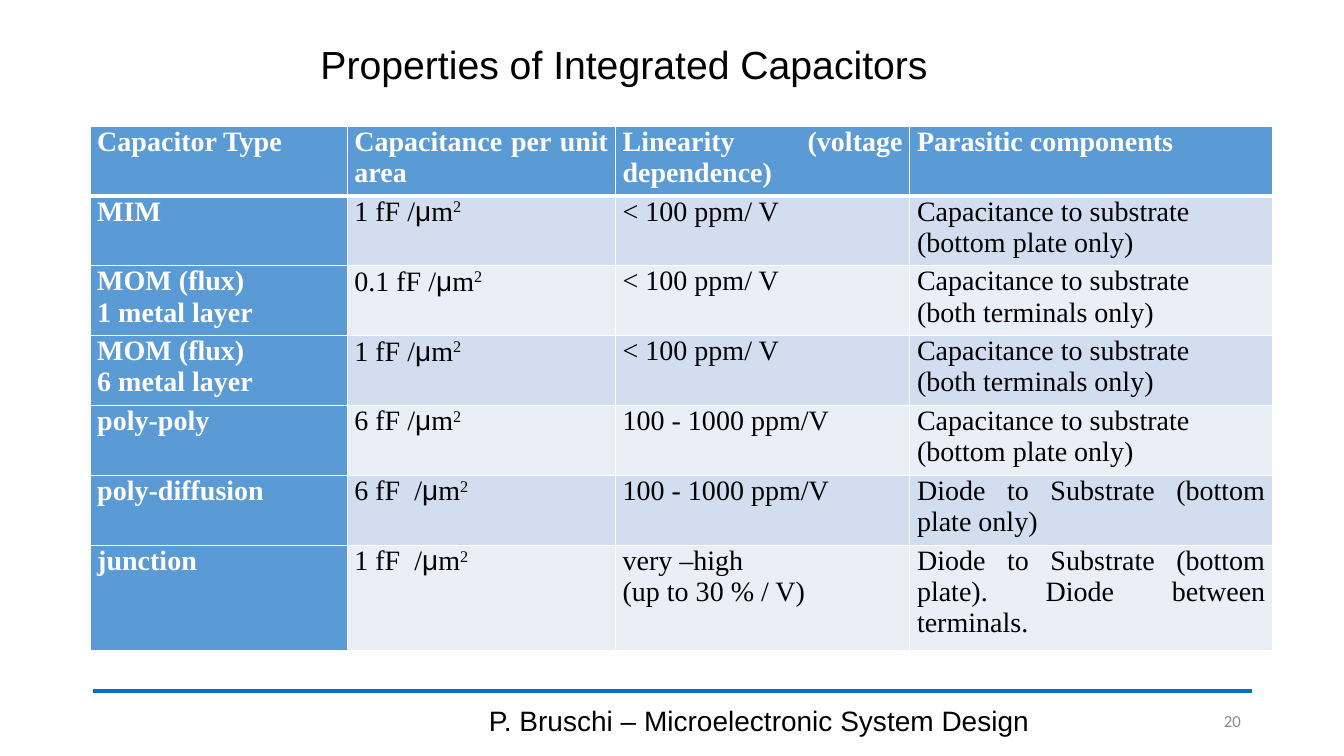
from lxml import etree
from pptx import Presentation
from pptx.dml.color import RGBColor
from pptx.enum.shapes import MSO_CONNECTOR
from pptx.enum.text import MSO_ANCHOR, PP_ALIGN
from pptx.oxml.ns import qn
from pptx.util import Cm, Pt

STRAIGHT = MSO_CONNECTOR.STRAIGHT
MIDDLE = MSO_ANCHOR.MIDDLE
CENTER, RIGHT, JUSTIFY = PP_ALIGN.CENTER, PP_ALIGN.RIGHT, PP_ALIGN.JUSTIFY

SERIF, SANS = "Times New Roman", "Arial"
BLACK, WHITE, GREY = "000000", "FFFFFF", "8C8C8C"
HEADER_BLUE, RULE_BLUE = "5B9BD5", "0070C0"
BANDS = ("D2DEEF", "EAEFF7")

COLUMN_WIDTHS = (6.48, 6.76, 7.42, 9.14)
ROW_HEIGHT, LAST_ROW_HEIGHT = 1.76, 2.65
UNIT_COLUMN = 1

HEADINGS = ("Capacitor Type", "Capacitance per unit area ",
            "Linearity (voltage dependence) ", "Parasitic components")
BOTTOM_PLATE = "Capacitance to substrate\n(bottom plate only)"
BOTH_TERMINALS = "Capacitance to substrate\n(both terminals only)"
CAPACITORS = (
    ("MIM", "1 fF /", "< 100 ppm/ V", BOTTOM_PLATE),
    ("MOM (flux)\n1 metal layer", "0.1 fF /", "< 100 ppm/ V", BOTH_TERMINALS),
    ("MOM (flux)\n6 metal layer", "1 fF /", "< 100 ppm/ V", BOTH_TERMINALS),
    ("poly-poly ", "6 fF /", "100 - 1000 ppm/V", BOTTOM_PLATE),
    ("poly-diffusion", "6 fF  /", "100 - 1000 ppm/V",
     "Diode to Substrate (bottom plate only)"),
    ("junction", "1 fF  /", "very –high \n(up to 30 % / V)",
     "Diode to Substrate (bottom plate). Diode between terminals."),
)


def rgb(color):
    """Turn a hex string into a colour."""
    return RGBColor.from_string(color)


def write_text(paragraph, text, size=20, font=SERIF, color=BLACK, bold=False, raised=False):
    """Append formatted text to a paragraph."""
    run = paragraph.add_run()
    run.text = text
    run.font.size = Pt(size)
    run.font.name = font
    run.font.bold = bold
    run.font.color.rgb = rgb(color)
    if raised:
        run.font._element.set("baseline", "30000")


def add_label(slide, text, left, top, width, height, align, line_spacing=1.0, **text_format):
    """Add a vertically centred line of text."""
    label = slide.shapes.add_textbox(Cm(left), Cm(top), Cm(width), Cm(height))
    frame = label.text_frame
    frame.word_wrap = True
    frame.vertical_anchor = MIDDLE
    paragraph = frame.paragraphs[0]
    paragraph.alignment = align
    paragraph.line_spacing = line_spacing
    write_text(paragraph, text, **text_format)


def add_rule(slide, left, right, y):
    """Draw the blue line above the footer."""
    rule = slide.shapes.add_connector(STRAIGHT, Cm(left), Cm(y), Cm(right), Cm(y))
    rule.line.color.rgb = rgb(RULE_BLUE)
    rule.line.width = Pt(2.75)
    etree.SubElement(rule._element.spPr, qn("a:effectLst"))


def set_borders(cell, top, bottom):
    """Give a cell white borders, with top and bottom widths in points."""
    properties = cell._tc.get_or_add_tcPr()
    for side, width in (("L", 1), ("R", 1), ("T", top), ("B", bottom)):
        border = etree.SubElement(properties, qn(f"a:ln{side}"), w=str(Pt(width)))
        border_fill = etree.SubElement(border, qn("a:solidFill"))
        etree.SubElement(border_fill, qn("a:srgbClr"), val=WHITE)


def fill_cell(cell, text, row, column):
    """Write and style one cell according to its place in the table."""
    is_heading = row == 0 or column == 0
    set_borders(cell, top=3 if row == 1 else 1, bottom=3 if row == 0 else 1)
    cell.fill.solid()
    cell.fill.fore_color.rgb = rgb(HEADER_BLUE if is_heading else BANDS[(row - 1) % 2])
    cell.margin_left = cell.margin_right = Cm(0.18)
    cell.margin_top = cell.margin_bottom = Cm(0)
    frame = cell.text_frame
    for index, line in enumerate(text.split("\n")):
        paragraph = frame.add_paragraph() if index else frame.paragraphs[0]
        paragraph.alignment = JUSTIFY
        write_text(paragraph, line, color=WHITE if is_heading else BLACK, bold=is_heading)
    if column == UNIT_COLUMN and not is_heading:
        write_text(paragraph, "μ", font=SANS)
        write_text(paragraph, "m")
        write_text(paragraph, "2", raised=True)


def add_capacitor_table(slide, left, top):
    """Add the table that compares the capacitor types."""
    rows = (HEADINGS, *CAPACITORS)
    heights = [ROW_HEIGHT] * len(CAPACITORS) + [LAST_ROW_HEIGHT]
    table = slide.shapes.add_table(
        len(rows), len(HEADINGS), Cm(left), Cm(top),
        Cm(sum(COLUMN_WIDTHS)), Cm(sum(heights))).table
    table.first_col = True
    for column, width in zip(table.columns, COLUMN_WIDTHS):
        column.width = Cm(width)
    for row, (height, texts) in enumerate(zip(heights, rows)):
        table.rows[row].height = Cm(height)
        for column, text in enumerate(texts):
            fill_cell(table.cell(row, column), text, row, column)


def main():
    """Build and save the slide."""
    presentation = Presentation()
    presentation.slide_width, presentation.slide_height = Cm(33.87), Cm(19.05)
    slide = presentation.slides.add_slide(presentation.slide_layouts[6])
    add_rule(slide, 2.34, 31.55, 17.42)
    add_label(slide, "Properties of Integrated Capacitors", 1.12, 0.76, 29.21, 1.83,
              CENTER, line_spacing=0.9, size=28, font=SANS)
    add_label(slide, "P. Bruschi – Microelectronic System Design", 11.23, 17.65, 15.8, 1.02,
              CENTER, font=SANS)
    add_label(slide, "20", 29.08, 17.65, 2.44, 1.02, RIGHT, size=12, font="Calibri", color=GREY)
    add_capacitor_table(slide, 2.27, 3.18)
    presentation.save("out.pptx")


if __name__ == "__main__":
    main()
